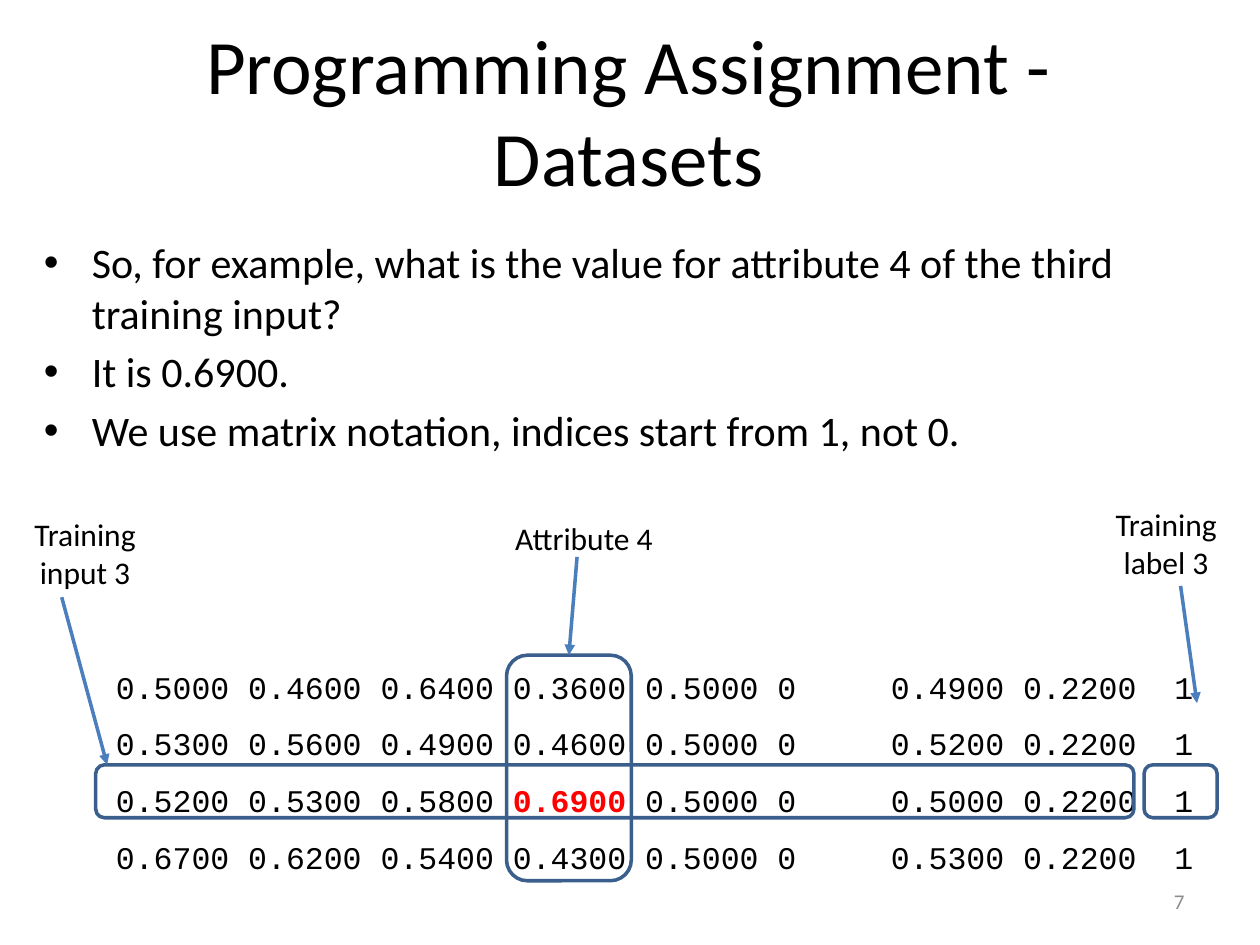
from lxml.etree import SubElement
from pptx import Presentation
from pptx.dml.color import RGBColor
from pptx.enum.shapes import MSO_CONNECTOR, MSO_SHAPE
from pptx.enum.text import MSO_ANCHOR, PP_ALIGN
from pptx.oxml.ns import qn
from pptx.util import Pt

PX = 9144
BLACK = RGBColor(0, 0, 0)
RED = RGBColor(0xFF, 0, 0)
GRAY = RGBColor(0x8C, 0x8C, 0x8C)
OUTLINE = RGBColor(0x3A, 0x5F, 0x8C)
ARROW = RGBColor(0x4B, 0x7E, 0xBC)

deck = Presentation()
deck.slide_width, deck.slide_height = 1000 * PX, 750 * PX
slide = deck.slides.add_slide(deck.slide_layouts[6])


def add_text(box, lines, size, font="Calibri", color=BLACK, align=PP_ALIGN.LEFT,
             anchor=MSO_ANCHOR.TOP, wrap=True):
    frame = slide.shapes.add_textbox(*(n * PX for n in box)).text_frame
    frame.word_wrap = wrap
    frame.vertical_anchor = anchor
    for i, line in enumerate(lines):
        paragraph = frame.paragraphs[0] if i == 0 else frame.add_paragraph()
        paragraph.text = line
        paragraph.alignment = align
        paragraph.font.size = Pt(size)
        paragraph.font.name = font
        paragraph.font.color.rgb = color
    return frame


rows = [
    "0.5000 0.4600 0.6400 0.3600 0.5000 0\t0.4900 0.2200\t1",
    "0.5300 0.5600 0.4900 0.4600 0.5000 0\t0.5200 0.2200\t1",
    "0.5200 0.5300 0.5800 0.6900 0.5000 0\t0.5000 0.2200\t1",
    "0.6700 0.6200 0.5400 0.4300 0.5000 0\t0.5300 0.2200\t1",
]
answer = "0.6900"
dataset = add_text((32, 510, 968, 192), rows, 18, "Courier New")
dataset.margin_left = 60 * PX
for paragraph in dataset.paragraphs:
    paragraph.line_spacing = 1.5
    tabs = SubElement(paragraph._p.get_or_add_pPr(), qn("a:tabLst"))
    paragraph._p.pPr.insert(1, tabs)
    for column in (41, 56):
        SubElement(tabs, qn("a:tab"), pos=str(column * 15 * PX), algn="l")

third = dataset.paragraphs[2]
before, after = rows[2].split(answer)
third.text = before
value = third.add_run()
value.text = answer
value.font.bold = True
value.font.color.rgb = RED
third.add_run().text = after

add_text((49, 33, 900, 108), ["Programming Assignment - Datasets"], 44,
         align=PP_ALIGN.CENTER, anchor=MSO_ANCHOR.MIDDLE)

points = add_text((25, 183, 958, 202), [
    "So, for example, what is the value for attribute 4 of the third training input?",
    "It is 0.6900.",
    "We use matrix notation, indices start from 1, not 0.",
], 24)
for paragraph in points.paragraphs:
    paragraph.space_before = Pt(4.8)
    properties = paragraph._p.get_or_add_pPr()
    properties.set("marL", str(38 * PX))
    properties.set("indent", str(-38 * PX))
    bullet_font = SubElement(properties, qn("a:buFont"), typeface="Arial")
    bullet = SubElement(properties, qn("a:buChar"), char="•")
    properties.insert(1, bullet_font)
    properties.insert(2, bullet)

add_text((717, 695, 233, 40), ["7"], 12, color=GRAY, align=PP_ALIGN.RIGHT,
         anchor=MSO_ANCHOR.MIDDLE)

for left, top, label in ((17, 404, "Training\vinput 3"), (875, 396, "Training\vlabel 3")):
    add_text((left, top, 101, 71), [label], 18, align=PP_ALIGN.CENTER, wrap=False)
add_text((399, 407, 131, 40), ["Attribute 4"], 18)

frames = []
for box in ((76, 607, 824, 42), (908, 607, 58, 42), (402, 520, 99, 179)):
    frame = slide.shapes.add_shape(MSO_SHAPE.ROUNDED_RECTANGLE, *(n * PX for n in box))
    frame.shadow.inherit = False
    frame.fill.background()
    frame.line.color.rgb = OUTLINE
    frame.line.width = Pt(2)
    frames.append(frame)
input_frame, label_frame, attribute_frame = frames

for ends, target in (
    ((49, 474, 85, 607), None),
    ((937, 465, 950, 558), None),
    ((458, 442, 453, 519), attribute_frame),
):
    arrow = slide.shapes.add_connector(MSO_CONNECTOR.STRAIGHT, *(n * PX for n in ends))
    arrow.line.color.rgb = ARROW
    arrow.line.width = Pt(2)
    SubElement(arrow.line._get_or_add_ln(), qn("a:tailEnd"), type="triangle")
    SubElement(arrow._element.spPr, qn("a:effectLst"))
    if target is not None:
        arrow.end_connect(target, 0)

deck.save("out.pptx")
